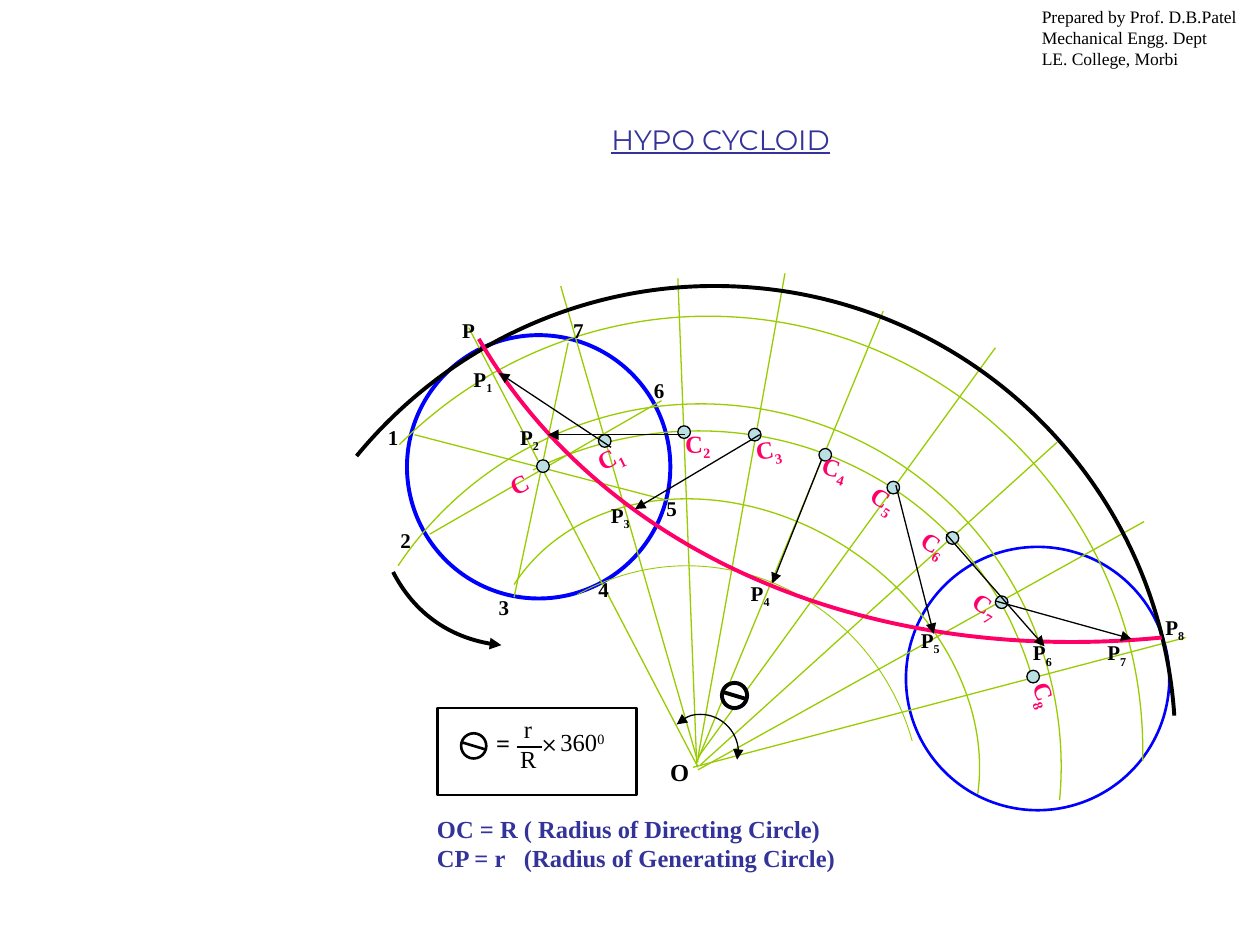
from copy import deepcopy
from itertools import chain

from lxml import etree
from pptx import Presentation
from pptx import util as u
from pptx.dml.color import RGBColor
from pptx.enum import shapes, text
from pptx.oxml import ns

BLACK = RGBColor(0, 0, 0)
WHITE = RGBColor(255, 255, 255)
BLUE = RGBColor(0, 0, 255)
INDIGO = RGBColor(0x33, 0x33, 0x99)
GREEN = RGBColor(0x99, 0xCC, 0)
PINK = RGBColor(0xFF, 0, 0x66)
PALE = RGBColor(0xBB, 0xE0, 0xE3)

SERIF = {"name": "Times New Roman", "size": u.Pt(14), "bold": False}
STRONG = SERIF | {"bold": True}
POINT = STRONG | {"size": u.Pt(12)}
SMALL = SERIF | {"size": u.Pt(10)}
SIGN = SERIF | {"size": u.Pt(18)}
HEADING = {"name": "Montserrat", "size": u.Pt(16), "bold": False, "underline": True}
LOWERED = {"baseline": "-25000"}
RAISED = {"baseline": "30000"}
WIDE = {"spc": "700"}

# Coordinates are in inches. Spokes: outer end, then the end near O
SPOKES = [
    (3.72, 2.6, 5.54, 6.09), (4.45, 2.27, 5.54, 6.05), (5.38, 2.21, 5.53, 6.08),
    (6.23, 2.17, 5.54, 6.01), (7.01, 2.47, 5.53, 6.05), (7.9, 2.76, 5.54, 6.01),
    (8.39, 3.51, 5.56, 6.07), (9.08, 4.14, 5.54, 6.11), (9.41, 5.06, 5.5, 6.09)]
DIAMETERS = [(3.41, 4.24, 5.25, 3.18), (3.29, 3.45, 5.29, 3.97), (4.51, 2.72, 4.08, 4.74)]

# Arcs: a start point, cubic segments of two controls and an end, then the sector's centre
DIRECTING_ARC = [(2.83, 3.62), (3.53, 2.77), (4.57, 2.27), (5.67, 2.27),
                 (7.6, 2.27), (9.19, 3.76), (9.32, 5.68), (5.67, 5.93)]
GREEN_ARCS = [
    [(3.17, 3.53), (3.82, 2.88), (4.7, 2.51), (5.62, 2.51), (7.52, 2.51), (9.07, 4.06),
     (9.07, 5.96), (9.07, 5.99), (9.07, 6.01), (9.07, 6.04), (5.62, 5.96)],
    [(3.16, 4.49), (3.44, 4.07), (3.84, 3.72), (4.3, 3.5), (5.72, 2.8), (7.44, 3.39),
     (8.13, 4.81), (8.36, 5.29), (8.46, 5.82), (8.41, 6.35), (5.56, 6.07)],
    [(4.08, 4.64), (4.58, 3.87), (5.75, 3.73), (6.71, 4.34),
     (7.44, 4.81), (7.86, 5.59), (7.76, 6.3), (5.82, 5.75)],
    [(4.23, 3.73), (4.24, 3.73), (4.25, 3.72), (4.25, 3.72), (5.67, 3.03), (7.35, 3.57),
     (8.02, 4.93), (8.08, 5.06), (8.14, 5.2), (8.18, 5.34), (5.46, 6.18)]]
INNER_ARC = [(4.58, 4.72), (4.85, 4.57), (5.15, 4.49), (5.45, 4.49),
             (6.28, 4.49), (7.01, 5.06), (7.24, 5.88), (5.45, 6.41)]
HYPOCYCLOID = [(9.22, 5.06), (6.87, 5.29), (4.78, 4.38), (3.8, 2.69), (9.59, -0.43)]
ANGLE_ARC = [(5.37, 5.75), (5.42, 5.7), (5.49, 5.67), (5.56, 5.67), (5.72, 5.67), (5.86, 5.81),
             (5.86, 5.97), (5.86, 5.99), (5.85, 6.01), (5.85, 6.03), (5.56, 5.97)]
ROLLING_ARC = [(3.98, 5.12), (3.62, 5.09), (3.29, 4.87), (3.12, 4.54), (4.08, 4.04)]

CENTRES = [(4.26, 3.65), (4.75, 3.45), (5.38, 3.38), (5.94, 3.4), (6.5, 3.56),
           (7.04, 3.82), (7.51, 4.22), (7.9, 4.73), (8.15, 5.32)]
RADIUS_ARROWS = [
    (4.85, 3.55, 3.96, 2.96), (5.44, 3.45, 4.35, 3.45), (6.03, 3.45, 5.04, 4.04),
    (6.52, 3.65, 6.13, 4.63), (7.11, 3.85, 7.41, 5.03), (7.51, 4.24, 8.29, 5.13),
    (7.9, 4.77, 8.98, 5.07)]

# Label places in order of their numbers
P_PLACES = [(3.66, 2.86), (4.03, 3.32), (4.75, 3.94), (5.86, 4.56),
            (7.21, 4.93), (8.1, 5.03), (8.69, 5.03), (9.15, 4.83)]
DIVISIONS = [(2.98, 3.32), (3.08, 4.14), (3.86, 4.67), (4.65, 4.53),
             (5.19, 3.88), (5.09, 2.95), (4.45, 2.47)]
C_PLACES = [(4.64, 3.46, 333.5), (5.34, 3.35, 358.9), (5.9, 3.4, 351), (6.43, 3.55, 16.4),
            (6.82, 3.8, 32.7), (7.22, 4.15, 32.7), (7.63, 4.64, 32.7), (8.1, 5.35, 70.4)]


def inches(*values):
    return [u.Cm(value * 2.54) for value in values]


def outline(shape, colour, weight, arrows=()):
    shape.line.color.rgb = colour
    shape.line.width = u.Pt(weight)
    for end in arrows:
        etree.SubElement(shape.get_or_add_ln(), ns.qn(f"a:{end}"), type="triangle")


def add_line(page, ends, colour, weight, arrows=()):
    line = page.shapes.add_connector(shapes.MSO_CONNECTOR.STRAIGHT, *inches(*ends))
    outline(line, colour, weight, arrows)
    etree.SubElement(line._element.spPr, ns.qn("a:effectLst"))


def add_arc(page, points, colour, weight, arrows=()):
    builder = page.shapes.build_freeform(*inches(*points[0]))
    builder.add_line_segments([inches(*point) for point in points[1:]], close=False)
    arc = builder.convert_to_shape()
    arc.shadow.inherit = False
    arc.fill.background()
    outline(arc, colour, weight, arrows)
    # Turn each three points into one cubic segment; the last leg goes to the centre
    sector = arc._element.spPr.find(".//" + ns.qn("a:path"))
    *legs, radius = sector.findall(ns.qn("a:lnTo"))
    for first in range(0, len(legs), 3):
        segment = etree.Element(ns.qn("a:cubicBezTo"))
        radius.addprevious(segment)
        for leg in legs[first:first + 3]:
            segment.append(leg[0])
            sector.remove(leg)
    # The open curve carries the line, the closed sector has none
    curve = deepcopy(sector)
    curve.remove(curve[-1])
    curve.set("fill", "none")
    sector.addprevious(curve)
    sector.set("stroke", "0")
    etree.SubElement(sector, ns.qn("a:close"))


def add_figure(page, kind, place, fill, colour, weight):
    figure = page.shapes.add_shape(kind, *inches(*place))
    figure.shadow.inherit = False
    figure.fill.solid()
    figure.fill.fore_color.rgb = fill
    outline(figure, colour, weight)


def add_circle(page, x, y, size, fill, colour, weight):
    add_figure(page, shapes.MSO_SHAPE.OVAL, (x, y, size, size), fill, colour, weight)


def add_theta(page, x, y, weight):
    add_circle(page, x, y, 0.2, WHITE, BLACK, weight)
    add_line(page, (x, y + 0.07, x + 0.2, y + 0.13), BLACK, weight)


def write(box, lines, style, colour, wrap=False):
    """Each line is a list of (words, run attributes)."""
    frame = box.text_frame
    frame.word_wrap = wrap
    frame.auto_size = text.MSO_AUTO_SIZE.SHAPE_TO_FIT_TEXT
    for number, line in enumerate(lines):
        para = frame.add_paragraph() if number else frame.paragraphs[0]
        for words, attributes in line:
            span = para.add_run()
            span.text = words
            for name, value in style.items():
                setattr(span.font, name, value)
            span.font.color.rgb = colour
            for name, value in attributes.items():
                span._r.get_or_add_rPr().set(name, value)


def add_label(page, place, lines, style, colour=BLACK, turn=0, wrap=False):
    box = page.shapes.add_textbox(*inches(*place))
    box.rotation = turn
    write(box, lines, style, colour, wrap)


def add_title(page):
    title = page.shapes.title
    title.left, title.top, title.width, title.height = inches(4.67, 0.92, 2.1, 0.37)
    write(title, [[("HYPO CYCLOID", {})]], HEADING, INDIGO)
    title.text_frame.vertical_anchor = text.MSO_ANCHOR.TOP
    title.text_frame.paragraphs[0].alignment = text.PP_ALIGN.CENTER


def add_construction(page):
    # Generating circle at both ends, with its divisions
    add_circle(page, 7.19, 4.34, 2.09, WHITE, BLUE, 1.5)
    add_circle(page, 3.23, 2.66, 2.09, WHITE, BLUE, 2.25)
    for ends in chain(DIAMETERS, SPOKES):
        add_line(page, ends, GREEN, 0.75)
    # Arcs and the traced curve
    add_arc(page, DIRECTING_ARC, BLACK, 2.25)
    for arc in GREEN_ARCS:
        add_arc(page, arc, GREEN, 0.75)
    add_arc(page, INNER_ARC, GREEN, 0.5)
    add_arc(page, HYPOCYCLOID, PINK, 2.25)
    add_arc(page, ANGLE_ARC, BLACK, 0.75, ("headEnd", "tailEnd"))
    # Successive centres and radii
    for x, y in CENTRES:
        add_circle(page, x, y, 0.1, PALE, BLACK, 0.75)
    for ends in RADIUS_ARROWS:
        add_line(page, ends, BLACK, 0.75, ("tailEnd",))
    add_arc(page, ROLLING_ARC, BLACK, 2.25, ("headEnd",))


def add_point_labels(page):
    for number, (x, y) in enumerate(P_PLACES, 1):
        add_label(page, (x, y, 0.36, 0.3), [[("P", {}), (str(number), LOWERED)]], POINT)
    add_label(page, (3.57, 2.47, 0.3, 0.3), [[("P", {})]], POINT)
    for number, (x, y) in enumerate(DIVISIONS, 1):
        add_label(page, (x, y, 0.29, 0.3), [[(str(number), {})]], POINT)
    add_label(page, (3.95, 3.67, 0.34, 0.33), [[("C", {})]], STRONG, PINK, 333.5)
    for number, (x, y, turn) in enumerate(C_PLACES, 1):
        add_label(page, (x, y, 0.4, 0.33), [[("C", {}), (str(number), LOWERED)]],
                  STRONG, PINK, turn)
    add_label(page, (5.22, 5.96, 0.35, 0.33), [[("O", {})]], STRONG)
    add_theta(page, 5.73, 5.42, 2.25)


def add_formula(page):
    add_figure(page, shapes.MSO_SHAPE.RECTANGLE, (3.47, 5.62, 1.58, 0.69), WHITE, BLACK, 1.5)
    add_theta(page, 3.66, 5.82, 1.5)
    add_label(page, (4.18, 5.71, 0.34, 0.4), [[("+", {})]], SIGN, turn=313.2)
    add_label(page, (4.06, 5.62, 0.27, 0.33), [[("r", {})]], SERIF)
    add_line(page, (4.1, 5.93, 4.3, 5.93), BLACK, 1.5)
    add_label(page, (4.03, 5.86, 0.33, 0.33), [[("R", {})]], SERIF)
    add_label(page, (4.35, 5.72, 0.56, 0.33), [[("360", {}), ("0", RAISED)]], SERIF)
    add_label(page, (3.79, 5.73, 0.41, 0.33), [[(" =", {})]], STRONG)


def add_remarks(page):
    add_label(page, (3.37, 6.41, 3.37, 0.57),
              [[("OC = R ( Radius of Directing Circle)", {})],
               [("CP = r", {}), (" ", WIDE), ("(Radius of Generating Circle)", {})]],
              STRONG, INDIGO)
    credit = ["Prepared by Prof. D.B.Patel", "Mechanical Engg. Dept", "LE. College, Morbi"]
    add_label(page, (8.17, 0, 1.83, 0.61), [[(line, {})] for line in credit], SMALL, wrap=True)


def main():
    deck = Presentation()
    deck.slide_width, deck.slide_height = inches(10, 7.5)
    page = deck.slides.add_slide(deck.slide_layouts[5])
    add_title(page)
    add_construction(page)
    add_point_labels(page)
    add_formula(page)
    add_remarks(page)
    deck.save("out.pptx")


if __name__ == "__main__":
    main()
